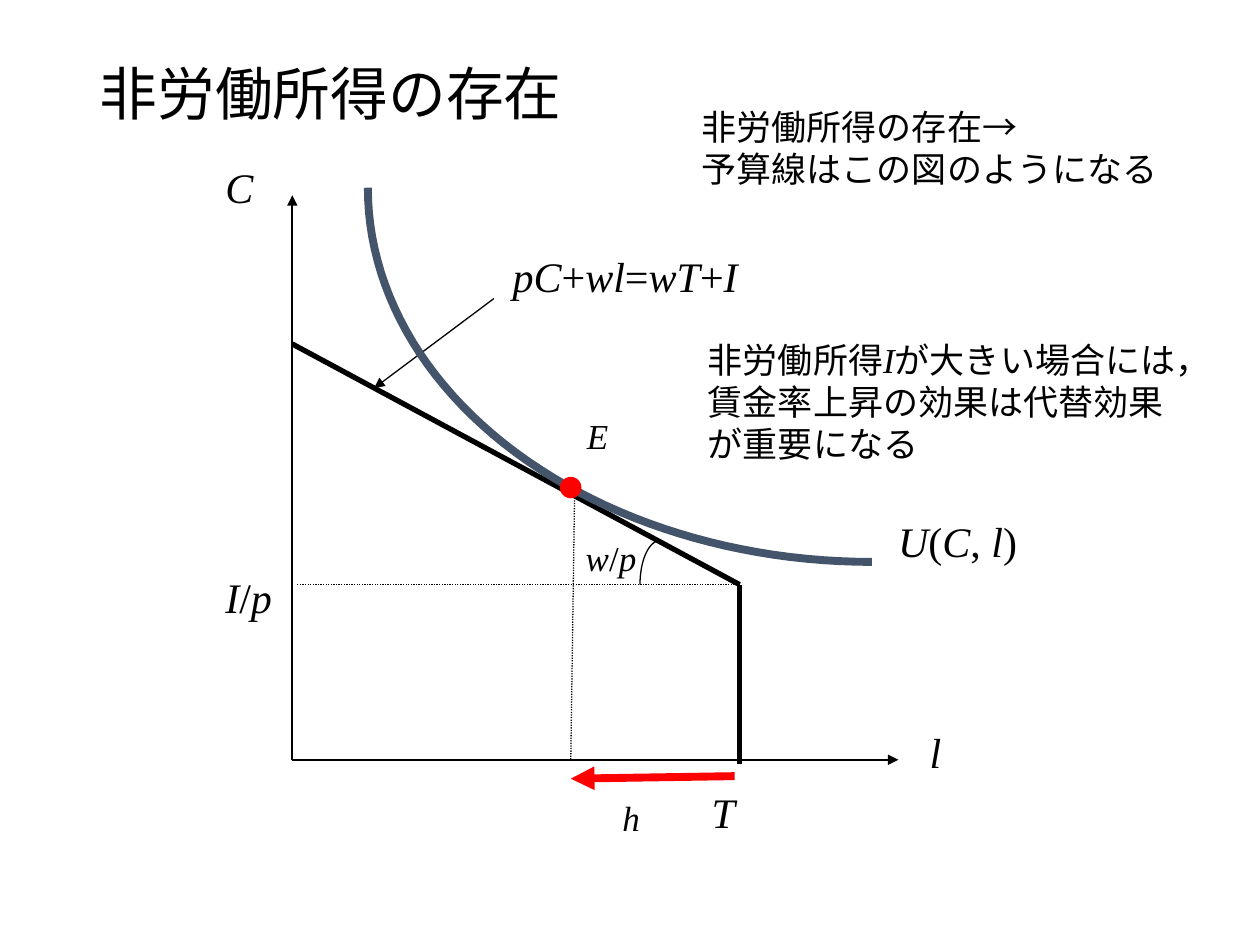
import math
from dataclasses import dataclass
from itertools import groupby

from lxml import etree
from pptx import Presentation
from pptx.dml.color import RGBColor
from pptx.enum.dml import MSO_LINE
from pptx.enum.shapes import MSO_CONNECTOR, MSO_SHAPE
from pptx.enum.text import MSO_ANCHOR, MSO_AUTO_SIZE, PP_ALIGN
from pptx.oxml.ns import qn
from pptx.util import Emu, Pt

PX = 9144  # EMU per px, 100 px to the inch
STRAIGHT = MSO_CONNECTOR.STRAIGHT
OVAL = MSO_SHAPE.OVAL
DOTTED = MSO_LINE.ROUND_DOT
TOP, MIDDLE, BOTTOM = MSO_ANCHOR.TOP, MSO_ANCHOR.MIDDLE, MSO_ANCHOR.BOTTOM
LEFT = PP_ALIGN.LEFT
NO_FIT, GROW = MSO_AUTO_SIZE.NONE, MSO_AUTO_SIZE.SHAPE_TO_FIT_TEXT


@dataclass(frozen=True)
class Theme:
    ink: RGBColor = RGBColor(0, 0, 0)
    accent: RGBColor = RGBColor(0xFF, 0, 0)
    curve: RGBColor = RGBColor(0x44, 0x54, 0x6A)
    math_font: str = "Times New Roman"
    text_font: str = "Noto Sans CJK JP"
    title: float = 33
    large: float = 24
    small: float = 20
    hair: float = 0.75
    axis: float = 1.25
    budget: float = 3
    heavy: float = 4.5


def px(n):
    return Emu(round(n * PX))


def script_and_slant(char):
    """Japanese stays upright; Latin letters are italic variables."""
    return char.isascii(), char.isascii() and char.isalpha()


class Diagram:
    def __init__(self, slide, theme):
        self.slide = slide
        self.theme = theme

    def style_run(self, r, size, font, italic=False):
        r.font.size = Pt(size)
        r.font.italic = italic
        r.font.color.rgb = self.theme.ink
        r.font.name = font
        etree.SubElement(r.font._element, qn("a:ea"), typeface=font)

    def style_line(self, line, color, width):
        line.color.rgb = color
        line.width = Pt(width)

    def title(self, text, x, y, w, h):
        sp = self.slide.shapes.title
        sp.left, sp.top, sp.width, sp.height = map(px, (x, y, w, h))
        tf = sp.text_frame
        tf.text = text
        tf.auto_size = NO_FIT
        tf.vertical_anchor = MIDDLE
        p = tf.paragraphs[0]
        p.alignment = LEFT
        p.line_spacing = 0.9
        self.style_run(p.runs[0], self.theme.title, self.theme.text_font)

    def text(self, lines, x, y, w, h, size, wrap=True, anchor=TOP):
        sp = self.slide.shapes.add_textbox(*map(px, (x, y, w, h)))
        tf = sp.text_frame
        tf.word_wrap = wrap
        tf.auto_size = GROW if anchor == TOP else NO_FIT
        tf.vertical_anchor = anchor
        for i, line in enumerate(lines.split("\n")):
            p = tf.add_paragraph() if i else tf.paragraphs[0]
            for (latin, italic), chars in groupby(line, script_and_slant):
                r = p.add_run()
                r.text = "".join(chars)
                font = self.theme.math_font if latin else self.theme.text_font
                self.style_run(r, size, font, italic)

    def line(self, start, end, width, color=None, dash=None, arrow=False):
        cxn = self.slide.shapes.add_connector(STRAIGHT, *map(px, start + end))
        self.style_line(cxn.line, color or self.theme.ink, width)
        if dash:
            cxn.line.dash_style = dash
        if arrow:
            etree.SubElement(cxn.line._get_or_add_ln(), qn("a:tailEnd"), type="triangle")
        etree.SubElement(cxn._element.spPr, qn("a:effectLst"))

    def quarter_arc(self, center, rx, ry, color, width, steps=48):
        """Left quarter of an ellipse; a negative ry takes the upper one."""
        cx, cy = center
        angles = [math.pi / 2 * (1 + i / steps) for i in range(steps + 1)]
        points = [(px(cx + rx * math.cos(a)), px(cy + ry * math.sin(a))) for a in angles]
        builder = self.slide.shapes.build_freeform(*points[0])
        builder.add_line_segments(points[1:], close=False)
        sp = builder.convert_to_shape()
        sp.shadow.inherit = False
        sp.fill.background()
        self.style_line(sp.line, color, width)

    def dot(self, x, y, size, color):
        sp = self.slide.shapes.add_shape(OVAL, *map(px, (x, y, size, size)))
        sp.shadow.inherit = False
        sp.fill.solid()
        sp.fill.fore_color.rgb = color
        self.style_line(sp.line, color, self.theme.hair)


def main():
    prs = Presentation()
    prs.slide_width, prs.slide_height = px(1000), px(750)
    theme = Theme()
    d = Diagram(prs.slides.add_slide(prs.slide_layouts[5]), theme)
    large, small = theme.large, theme.small

    d.title("非労働所得の存在", 69, 40, 740, 73)

    # Axes
    origin, kink = (232, 603), (587, 464)
    d.line(origin, (232, 155), theme.axis, arrow=True)
    d.line(origin, (713, 603), theme.axis, arrow=True)
    d.text("l", 728, 572, 55, 50, large)
    d.text("C", 169, 123, 55, 50, large)

    # Budget line with its equation and slope
    d.line((232, 273), kink, theme.budget)
    d.line((392, 237), (297, 308), theme.hair, arrow=True)
    d.text("pC+wl=wT+I", 397, 194, 252, 50, large)
    d.quarter_arc((524, 464), 16, -35, theme.ink, theme.hair)
    d.text("w/p", 455, 414, 63, 50, small, anchor=BOTTOM)

    # Indifference curve, guides and optimum
    d.quarter_arc((692, 149), 400, 297, theme.curve, theme.heavy)
    d.text("E", 456, 324, 39, 44, small)
    d.line(kink, (236, 464), theme.hair, dash=DOTTED)
    d.line((456, 395), (453, 603), theme.hair, dash=DOTTED)
    d.dot(445, 379, 16, theme.accent)
    d.text("U(C, l)", 703, 404, 116, 50, large, wrap=False)

    # Non-labour income, time endowment and hours worked
    d.text("I/p", 169, 449, 83, 50, large)
    d.text("T", 555, 619, 39, 50, large)
    d.line((583, 616), (453, 618), theme.heavy, theme.accent, arrow=True)
    d.text("h", 484, 627, 32, 43, small)
    d.line((587, 606), kink, theme.budget)

    # Remarks
    d.text("非労働所得Iが大きい場合には，賃金率上昇の効果は代替効果が重要になる",
           552, 264, 400, 111, small)
    d.text("非労働所得の存在→\n予算線はこの図のようになる", 547, 79, 405, 77, small)

    prs.save("out.pptx")


if __name__ == "__main__":
    main()
